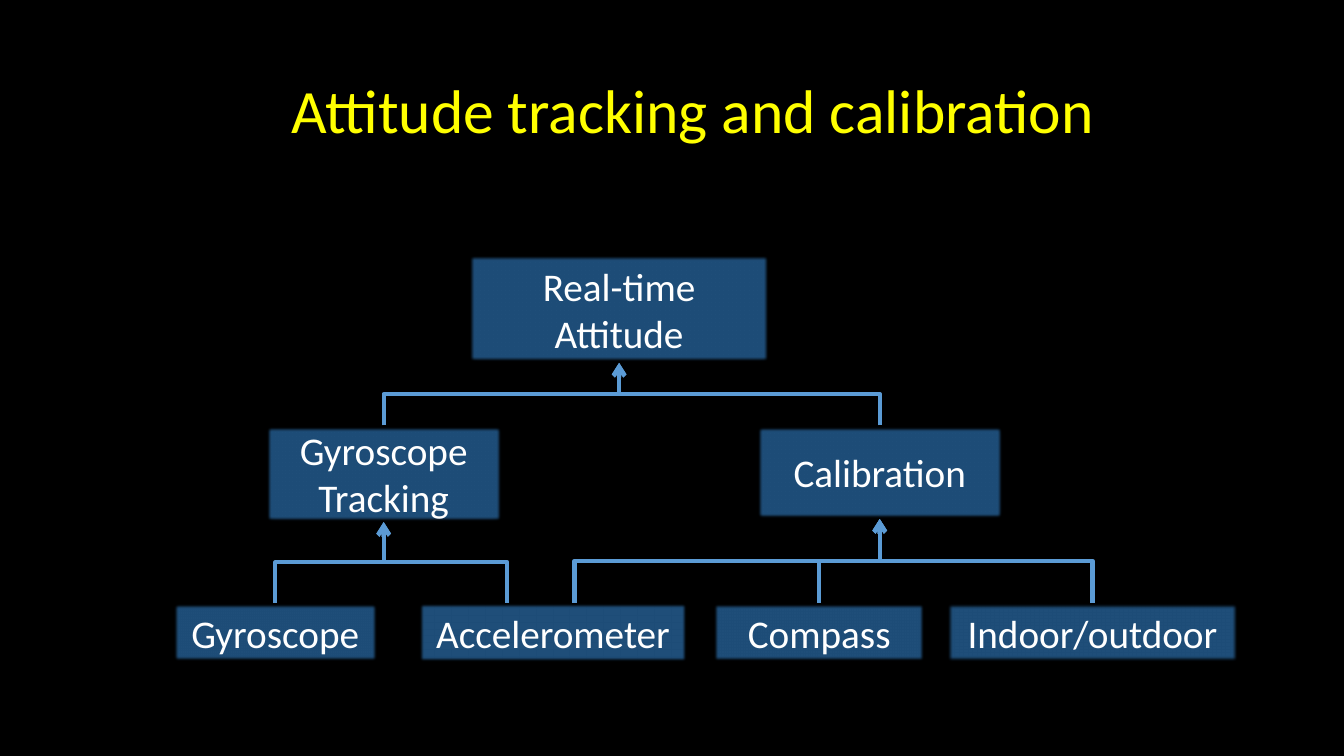
from lxml.etree import SubElement
from pptx import Presentation
from pptx.dml.color import RGBColor
from pptx.enum.shapes import MSO_CONNECTOR, MSO_SHAPE
from pptx.enum.text import MSO_ANCHOR, MSO_AUTO_SIZE, PP_ALIGN
from pptx.oxml.ns import qn
from pptx.util import Inches, Pt

COLORS = {name: RGBColor.from_string(value) for name, value in {
    "background": "000000",
    "title": "FFFF00",
    "box": "1F4E79",
    "text": "FFFFFF",
    "arrow": "5B9BD5",
}.items()}
SENSOR_TOP, SENSOR_HEIGHT = 5.98, 0.59
STAGE_TOP = 4.22


def write(shape, text, size, color):
    frame = shape.text_frame
    frame.text = text
    frame.word_wrap = True
    frame.auto_size = MSO_AUTO_SIZE.NONE
    frame.vertical_anchor = MSO_ANCHOR.MIDDLE
    para = frame.paragraphs[0]
    para.alignment = PP_ALIGN.CENTER
    font = para.runs[0].font
    font.name, font.size = "Calibri", Pt(size)
    font.color.rgb = COLORS[color]
    return para


def add_riser(start_x, start_y, target):
    """Draw an elbow arrow that leaves upwards and ends below the target box."""
    end_x, end_y = target.left + target.width // 2, target.top + target.height
    shift, rise = end_x - start_x, start_y - end_y
    center_x, center_y = (start_x + end_x) // 2, (start_y + end_y) // 2
    # An elbow runs sideways first, so it is laid flat and then turned upright.
    half_x = rise // 2 if shift > 0 else -rise // 2
    half_y = abs(shift) // 2
    riser = slide.shapes.add_connector(
        MSO_CONNECTOR.ELBOW, center_x + half_x, center_y + half_y,
        center_x - half_x, center_y - half_y)
    riser.line.color.rgb = COLORS["arrow"]
    riser.line.width = Pt(3)
    properties = riser._element.spPr
    properties.xfrm.set("rot", str((90 if shift > 0 else 270) * 60000))
    SubElement(properties.find(qn("a:ln")), qn("a:tailEnd"), type="arrow")
    SubElement(properties, qn("a:effectLst"))


deck = Presentation()
deck.slide_width, deck.slide_height = Inches(13.33), Inches(7.5)
slide = deck.slides.add_slide(deck.slide_layouts[5])
slide.background.fill.solid()
slide.background.fill.fore_color.rgb = COLORS["background"]

title = slide.shapes.title
title.left, title.top = Inches(0.92), Inches(0.4)
title.width, title.height = Inches(11.91), Inches(1.45)
write(title, "Attitude tracking and calibration", 44, "title").line_spacing = 0.9

# Label, left, top, width, height
BOXES = [
    ("Gyroscope", 1.71, SENSOR_TOP, 2.04, SENSOR_HEIGHT),
    ("Accelerometer", 4.15, SENSOR_TOP, 2.67, SENSOR_HEIGHT),
    ("Compass", 7.07, SENSOR_TOP, 2.11, SENSOR_HEIGHT),
    ("Indoor/outdoor", 9.39, SENSOR_TOP, 2.89, SENSOR_HEIGHT),
    ("Gyroscope Tracking", 2.63, STAGE_TOP, 2.35, 0.96),
    ("Calibration", 7.5, STAGE_TOP, 2.45, 0.93),
    ("Real-time Attitude", 4.65, 2.53, 2.98, 1.07),
]
boxes = {}
for label, *lengths in BOXES:
    box = slide.shapes.add_shape(MSO_SHAPE.RECTANGLE, *map(Inches, lengths))
    box.shadow.inherit = False
    box.fill.solid()
    box.fill.fore_color.rgb = COLORS["box"]
    box.line.fill.background()
    effects = box._element.spPr.find(qn("a:effectLst"))
    SubElement(effects, qn("a:softEdge"), rad=str(Pt(2.5)))
    write(box, label, 28, "text")
    boxes[label] = box

# Source box, share of its width where the arrow leaves, target box
FLOWS = [
    ("Gyroscope", 0.5, "Gyroscope Tracking"),
    ("Accelerometer", 0.33, "Gyroscope Tracking"),
    ("Accelerometer", 0.58, "Calibration"),
    ("Compass", 0.5, "Calibration"),
    ("Indoor/outdoor", 0.5, "Calibration"),
    ("Gyroscope Tracking", 0.5, "Real-time Attitude"),
    ("Calibration", 0.5, "Real-time Attitude"),
]
for source, share, target in FLOWS:
    box = boxes[source]
    add_riser(box.left + int(box.width * share), box.top, boxes[target])

deck.save("out.pptx")
